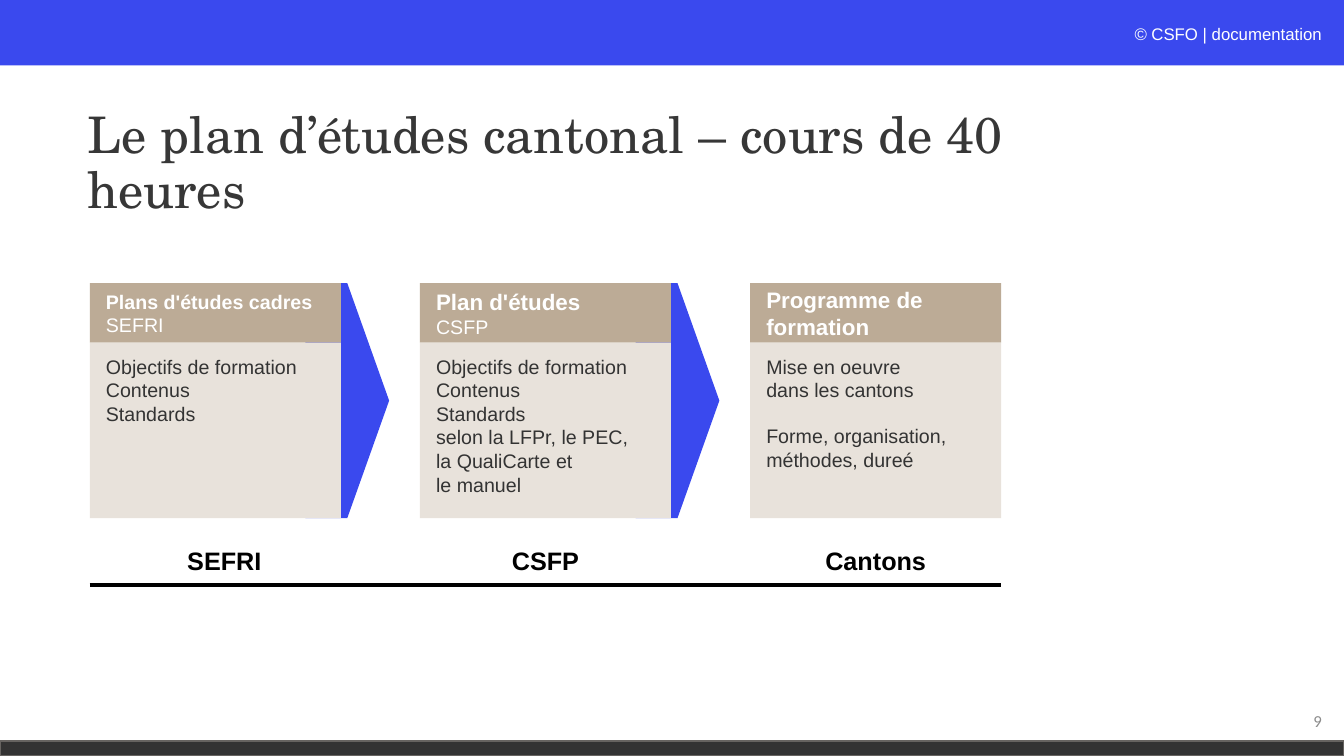
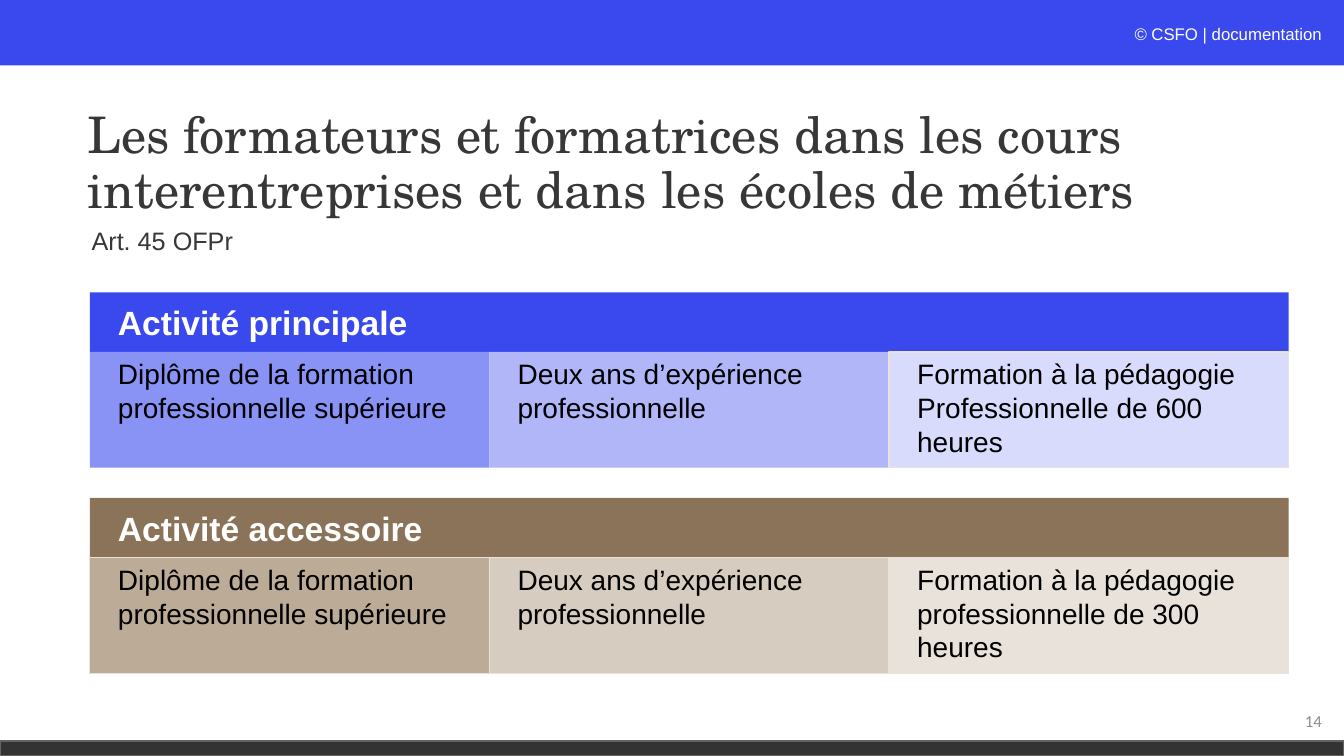
from lxml import etree
from pptx import Presentation
from pptx.dml.color import RGBColor
from pptx.enum.shapes import MSO_CONNECTOR, MSO_SHAPE
from pptx.enum.text import MSO_ANCHOR, PP_ALIGN
from pptx.oxml.ns import qn
from pptx.util import Inches, Pt

RECT, PENTAGON = MSO_SHAPE.RECTANGLE, MSO_SHAPE.PENTAGON
STRAIGHT = MSO_CONNECTOR.STRAIGHT
TOP, MIDDLE = MSO_ANCHOR.TOP, MSO_ANCHOR.MIDDLE
LEFT, CENTER, RIGHT = PP_ALIGN.LEFT, PP_ALIGN.CENTER, PP_ALIGN.RIGHT

WIDTH, HEIGHT = 13.33, 7.5
MARGIN = 0.89
BLUE, TAN, BROWN, SAND = "3A49EE", "BCAB96", "8A7358", "E8E2DB"
DARK, TITLE, GREY = "333333", "373737", "8C8C8C"
WHITE, BLACK = "FFFFFF", "000000"
BODY_FONT, TITLE_FONT, NUMBER_FONT = "Arial", "TeX Gyre Schola", "Calibri"

STAGES = [
    {"head": [("Plans d'études cadres", 14, True), ("SEFRI", 14, False)],
     "body": [["Objectifs de formation", "Contenus", "Standards"]],
     "label": "SEFRI", "shift": 0.09},
    {"head": [("Plan d'études", 16, True), ("CSFP", 14, False)],
     "body": [["Objectifs de formation", "Contenus", "Standards",
               "selon la LFPr, le PEC,", "la QualiCarte et", "le manuel"]],
     "label": "CSFP", "shift": 0},
    {"head": [("Programme de formation", 16, True)],
     "body": [["Mise en oeuvre", "dans les cantons"],
              ["Forme, organisation,", "méthodes, dureé"]],
     "label": "Cantons", "shift": 0},
]

ACTIVITIES = [
    ("Activité principale", BLUE, [
        (["Diplôme de la formation professionnelle supérieure"], "8992F5", None),
        (["Deux ans d’expérience professionnelle"], "B0B6F8", None),
        (["Formation à la pédagogie", "Professionnelle de 600 heures"],
         "D8DBFC", SAND)]),
    ("Activité accessoire", BROWN, [
        (["Diplôme de la formation professionnelle supérieure"], TAN, SAND),
        (["Deux ans d’expérience", "professionnelle"], "D6CCBF", SAND),
        (["Formation à la pédagogie", "professionnelle de 300 heures"],
         SAND, SAND)]),
]


def rgb(value):
    return RGBColor.from_string(value)


def style(p, size, color, bold=False, font=BODY_FONT, align=LEFT):
    p.alignment = align
    p.font.size = Pt(size)
    p.font.name = font
    p.font.bold = bold
    p.font.color.rgb = rgb(color)


def write(tf, lines, color, align=LEFT, font=BODY_FONT):
    for i, (text, size, bold) in enumerate(lines):
        p = tf.paragraphs[0] if i == 0 else tf.add_paragraph()
        p.text = text
        style(p, size, color, bold, font, align)


def add_box(shapes, x, y, w, h, fill, line=None, shape=RECT):
    sp = shapes.add_shape(shape, Inches(x), Inches(y), Inches(w), Inches(h))
    sp.shadow.inherit = False
    sp.fill.solid()
    sp.fill.fore_color.rgb = rgb(fill)
    if line:
        sp.line.color.rgb = rgb(line)
        sp.line.width = Pt(1)
    else:
        sp.line.fill.background()
    return sp


def set_frame(sp, left, top=0.05, anchor=TOP):
    tf = sp.text_frame
    tf.word_wrap = True
    tf.vertical_anchor = anchor
    tf.margin_left, tf.margin_top = Inches(left), Inches(top)
    return tf


def add_text(slide, x, y, w, h, text, size, color, bold=False,
             font=BODY_FONT, align=LEFT, anchor=TOP):
    sp = slide.shapes.add_textbox(Inches(x), Inches(y), Inches(w), Inches(h))
    tf = set_frame(sp, 0.1, anchor=anchor)
    write(tf, [(text, size, bold)], color, align, font)
    return tf.paragraphs[0]


def add_slide(prs, title, title_width, number):
    slide = prs.slides.add_slide(prs.slide_layouts[5])
    add_box(slide.shapes, 0, 0, WIDTH, 0.65, BLUE)
    add_box(slide.shapes, 0, 7.35, WIDTH, 0.15, DARK, "666360")
    p = add_text(slide, 8.62, 0.19, 4.59, 0.3, "© ", 12, WHITE, align=RIGHT)
    p.runs[0].font.italic = True
    p.runs[0].font.color.rgb = rgb("FCFDFE")
    p.add_run().text = "CSFO | documentation"

    sp = slide.shapes.title
    sp.left, sp.top = Inches(0.77), Inches(0.91)
    sp.width, sp.height = Inches(title_width), Inches(1.45)
    tf = set_frame(sp, 0.1, anchor=MIDDLE)
    write(tf, [(title, 36, False)], TITLE, font=TITLE_FONT)
    tf.paragraphs[0].line_spacing = 0.9
    add_text(slide, 10.21, 6.95, 3, 0.4, number, 12, GREY,
             font=NUMBER_FONT, align=RIGHT, anchor=MIDDLE)
    return slide


def add_stage(slide, x, y, w, stage, arrow):
    head_h, body_h = 0.59, 1.74
    shapes = slide.shapes.add_group_shape().shapes
    if arrow:
        add_box(shapes, x + 2.14, y, 0.83, head_h + body_h, BLUE,
                shape=PENTAGON)
    head = add_box(shapes, x, y, w, head_h, TAN)
    write(set_frame(head, 0.16, anchor=MIDDLE), stage["head"], WHITE)
    body = add_box(shapes, x, y + head_h, w, body_h, SAND)
    tf = set_frame(body, 0.16, 0.12)
    write(tf, [(text, 14, False) for block in stage["body"] for text in block],
          DARK)
    start = 0
    for block in stage["body"][:-1]:
        start += len(block)
        tf.paragraphs[start].space_before = Pt(16)
    add_text(slide, x + stage["shift"], y + 2.55, w, 0.4, stage["label"],
             18, BLACK, bold=True, align=CENTER)


def add_rule(slide, x, y, w):
    line = slide.shapes.add_connector(
        STRAIGHT, Inches(x), Inches(y), Inches(x + w), Inches(y))
    line.line.color.rgb = rgb(BLACK)
    line.line.width = Pt(3)
    etree.SubElement(line._element.spPr, qn("a:effectLst"))


def add_activity(slide, x, y, w, heading, color, cells):
    head_h, cell_h = 0.59, 1.15
    head = add_box(slide.shapes, x, y, w, head_h, color)
    write(set_frame(head, 0.28, anchor=MIDDLE), [(heading, 24, True)], WHITE)
    cell_w = w / len(cells)
    for i, (lines, fill, line) in enumerate(cells):
        cell = add_box(slide.shapes, x + i * cell_w, y + head_h, cell_w,
                       cell_h, fill, line)
        write(set_frame(cell, 0.28), [(text, 20, False) for text in lines],
              BLACK)


def build_curriculum(prs):
    slide = add_slide(prs, "Le plan d’études cantonal – cours de 40 heures",
                      10.84, "9")
    total_w, stage_w = 9.04, 2.49
    pitch = (total_w - stage_w) / (len(STAGES) - 1)
    for i, stage in enumerate(STAGES):
        add_stage(slide, MARGIN + i * pitch, 2.81, stage_w, stage,
                  arrow=i < len(STAGES) - 1)
    add_rule(slide, MARGIN, 5.8, total_w)


def build_trainers(prs):
    slide = add_slide(prs, "Les formateurs et formatrices dans les cours\v"
                      "interentreprises et dans les écoles de métiers",
                      11.92, "14")
    p = add_text(slide, 0.81, 2.22, 8.81, 0.54, "Art. 45 OFPr", 18, TITLE)
    p.line_spacing = 0.9
    for i, activity in enumerate(ACTIVITIES):
        add_activity(slide, MARGIN, 2.9 + i * 2.04, 11.89, *activity)


def main():
    prs = Presentation()
    prs.slide_width, prs.slide_height = Inches(WIDTH), Inches(HEIGHT)
    build_curriculum(prs)
    build_trainers(prs)
    prs.save("out.pptx")


if __name__ == "__main__":
    main()
